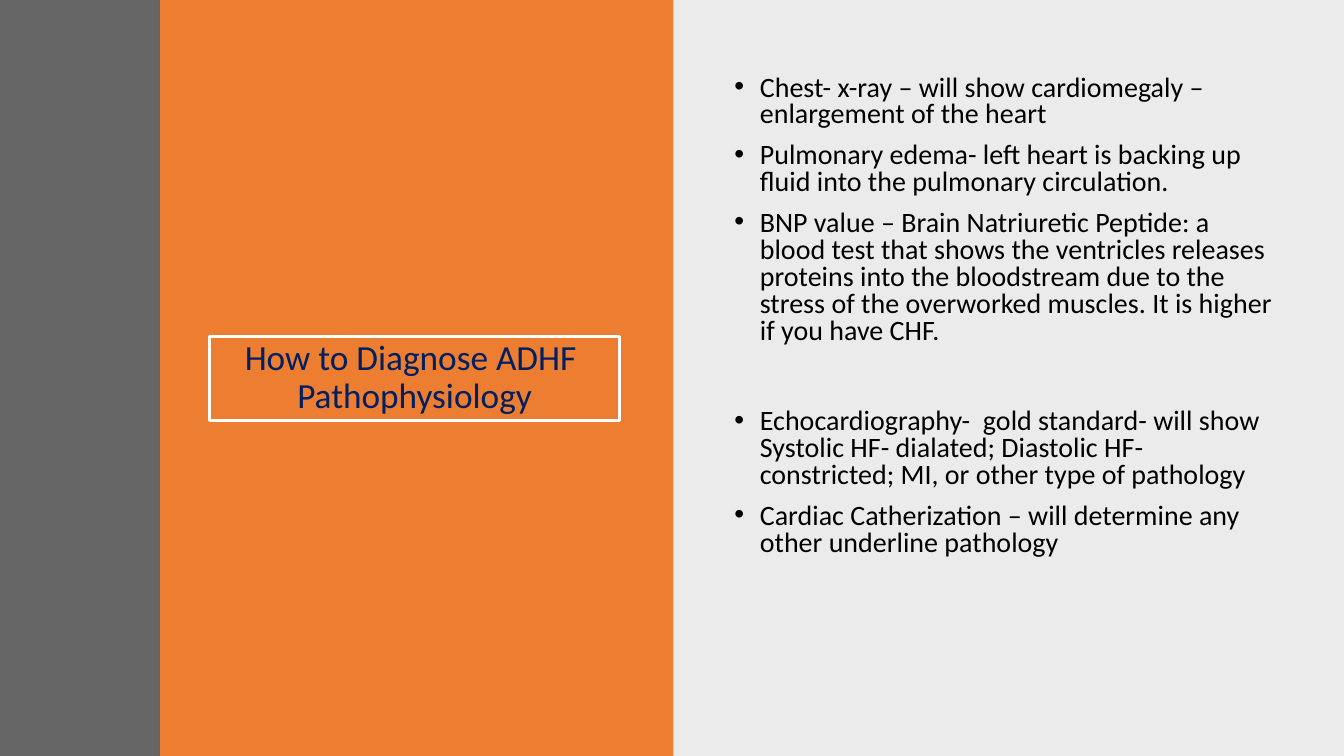
from lxml import etree
from pptx import Presentation
from pptx import util as u
from pptx.dml.color import RGBColor
from pptx.enum import shapes, text
from pptx.oxml import ns

BLACK = RGBColor(0x00, 0x00, 0x00)
WHITE = RGBColor(0xFF, 0xFF, 0xFF)
CHARCOAL = RGBColor(0x40, 0x40, 0x40)
ORANGE = RGBColor(0xED, 0x7D, 0x31)
NAVY = RGBColor(0x00, 0x20, 0x60)

WIDTH, HEIGHT = 33.87, 19.05
SIDEBAR_WIDTH = 4.03
ORANGE_WIDTH = 12.94
LIST_LEFT, LIST_WIDTH, LIST_HEIGHT = 18.26, 14.05, 7.09

TITLE = "How to Diagnose ADHF \vPathophysiology"
TESTS = [
    (1.78, [
        "Chest- x-ray – will show cardiomegaly – enlargement of the heart",
        "Pulmonary edema- left heart is backing up fluid into the pulmonary "
        "circulation.",
        "BNP value – Brain Natriuretic Peptide: a blood test that shows the "
        "ventricles releases proteins into the bloodstream due to the stress "
        "of the overworked muscles. It is higher if you have CHF.",
    ]),
    (10.19, [
        "Echocardiography-  gold standard- will show Systolic HF- dialated; "
        "Diastolic HF- constricted; MI, or other type of pathology",
        "Cardiac Catherization – will determine any other underline pathology",
    ]),
]


class SlideBuilder:
    font = "Calibri"
    title_size = 25.2
    body_size = 20
    indent = 0.64

    def __init__(self, slide):
        self.slide = slide

    def panel(self, left, width, color, opacity=100):
        """Add a full-height band; opacity is in percent."""
        panel = self.slide.shapes.add_shape(
            shapes.MSO_SHAPE.RECTANGLE,
            u.Cm(left), 0, u.Cm(width), u.Cm(HEIGHT))
        panel.shadow.inherit = False
        panel.line.fill.background()
        panel.fill.solid()
        panel.fill.fore_color.rgb = color
        if opacity < 100:
            color_element = panel.fill._xPr.find(".//" + ns.qn("a:srgbClr"))
            etree.SubElement(color_element, ns.qn("a:alpha"),
                             val=str(opacity * 1000))

    def title(self, left, top, width, height, words):
        box = self.slide.shapes.add_shape(
            shapes.MSO_SHAPE.RECTANGLE,
            u.Cm(left), u.Cm(top), u.Cm(width), u.Cm(height))
        box.shadow.inherit = False
        box.fill.background()
        box.line.color.rgb = WHITE
        box.line.width = u.Pt(2)
        frame = box.text_frame
        frame.word_wrap = True
        frame.vertical_anchor = text.MSO_ANCHOR.MIDDLE
        para = frame.paragraphs[0]
        para.text = words
        para.alignment = text.PP_ALIGN.CENTER
        para.line_spacing = 0.9
        self.format_runs(para, self.title_size, NAVY)

    def bullets(self, left, top, width, height, items):
        box = self.slide.shapes.add_textbox(
            u.Cm(left), u.Cm(top), u.Cm(width), u.Cm(height))
        frame = box.text_frame
        frame.word_wrap = True
        frame.text = "\n".join(items)
        for para in frame.paragraphs:
            para.line_spacing = 0.8
            para.space_before = u.Pt(10)
            self.add_bullet(para)
            self.format_runs(para, self.body_size, BLACK)

    def add_bullet(self, para):
        properties = para._p.get_or_add_pPr()
        properties.set("marL", str(u.Cm(self.indent)))
        properties.set("indent", str(-u.Cm(self.indent)))
        etree.SubElement(properties, ns.qn("a:buFont"), typeface="Arial")
        etree.SubElement(properties, ns.qn("a:buChar"), char="•")

    def format_runs(self, para, size, color):
        for span in para.runs:
            span.font.name = self.font
            span.font.size = u.Pt(size)
            span.font.color.rgb = color


def main():
    deck = Presentation()
    deck.slide_width = u.Cm(WIDTH)
    deck.slide_height = u.Cm(HEIGHT)
    page = SlideBuilder(deck.slides.add_slide(deck.slide_layouts[6]))

    page.panel(WIDTH / 2, WIDTH / 2, BLACK, opacity=8)
    page.panel(SIDEBAR_WIDTH, ORANGE_WIDTH, ORANGE)
    page.title(5.28, 8.48, 10.34, 2.11, TITLE)
    page.panel(0, SIDEBAR_WIDTH, CHARCOAL, opacity=80)
    for top, items in TESTS:
        page.bullets(LIST_LEFT, top, LIST_WIDTH, LIST_HEIGHT, items)

    deck.save("out.pptx")


if __name__ == "__main__":
    main()
